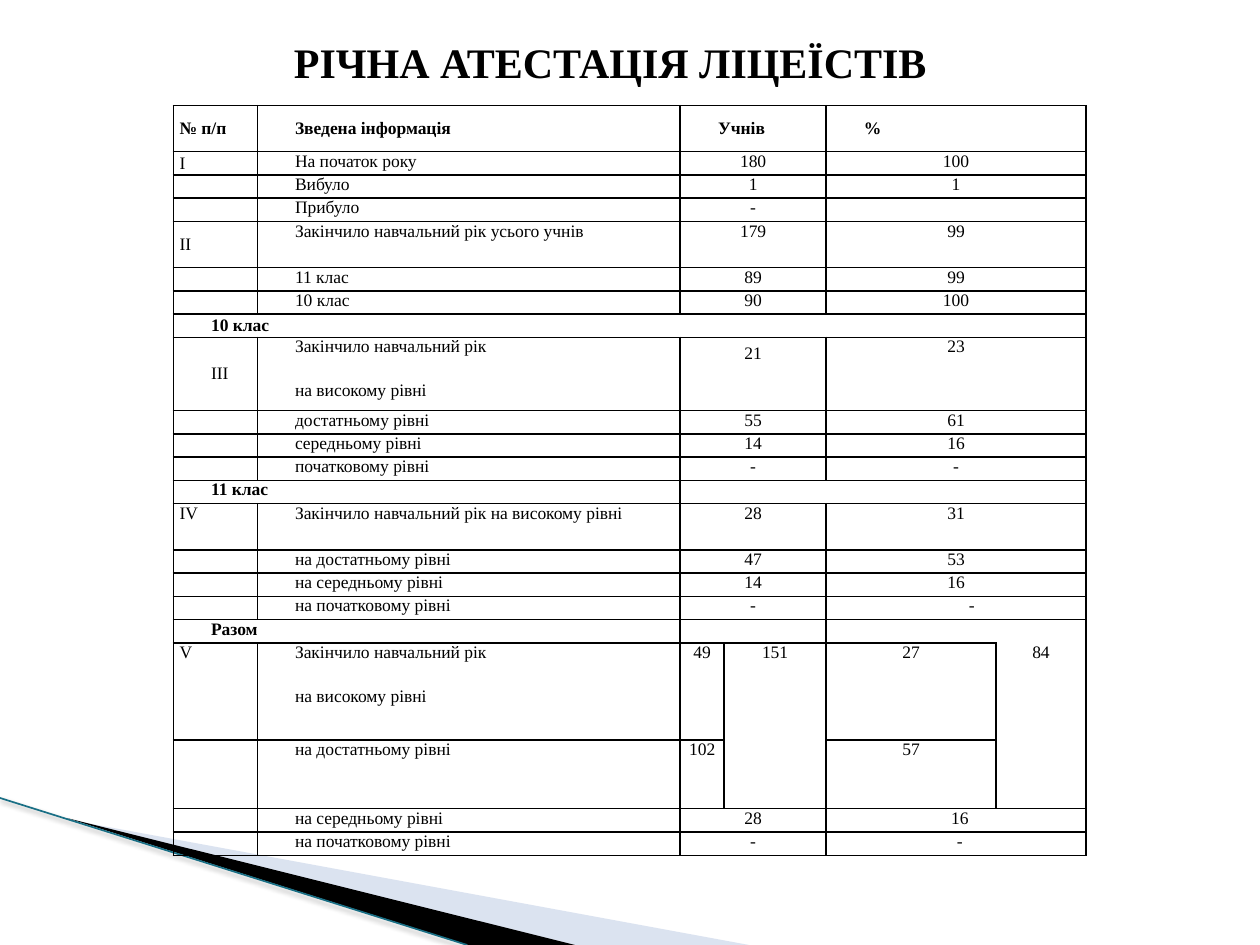
from lxml import etree
from pptx import Presentation
from pptx.dml.color import RGBColor
from pptx.enum.shapes import MSO_CONNECTOR
from pptx.enum.text import MSO_ANCHOR, PP_ALIGN
from pptx.oxml.ns import qn
from pptx.util import Pt

STRAIGHT = MSO_CONNECTOR.STRAIGHT
MIDDLE, TOP = MSO_ANCHOR.MIDDLE, MSO_ANCHOR.TOP
CENTER, JUSTIFY = PP_ALIGN.CENTER, PP_ALIGN.JUSTIFY

COLORS = {"ink": "000000", "wedge": "A7B9DB", "edge": "196F85"}
FONT = "Times New Roman"
NO_STYLE = "{2D5ABB26-0587-4C30-8999-92F81FD0307C}"
COLUMNS = [48, 241.7, 25.1, 58.3, 97.1, 51.4]
LOW, TALL = 13.3, 26.4
LEFT, UP = "<", "^"


def record(number, label, pupils, percent, height=LOW):
    return height, [number, label, pupils, LEFT, percent, LEFT]


ROWS = [
    record("№ п/п", "Зведена інформація", "Учнів", "%", TALL),
    record("І", "На початок року", "180", "100"),
    record("", "Вибуло", "1", "1"),
    record("", "Прибуло", "-", ""),
    record("ІІ", "Закінчило навчальний рік усього учнів", "179", "99", TALL),
    record("", "11 клас", "89", "99"),
    record("", "10 клас", "90", "100"),
    (LOW, ["10 клас"] + [LEFT] * 5),
    record("ІІІ", "Закінчило навчальний рік\nна високому рівні", "21", "23", 41.8),
    record("", "достатньому рівні", "55", "61"),
    record("", "середньому рівні", "14", "16"),
    record("", "початковому рівні", "-", "-"),
    (LOW, ["11 клас", LEFT, "", LEFT, LEFT, LEFT]),
    record("ІV", "Закінчило навчальний рік на високому рівні", "28", "31", TALL),
    record("", "на достатньому рівні", "47", "53"),
    record("", "на середньому рівні", "14", "16"),
    record("", "на початковому рівні", "-", "-"),
    (LOW, ["Разом", LEFT, "", LEFT, "", LEFT]),
    (55.4, ["V", "Закінчило навчальний рік\nна високому рівні", "49", "151", "27", "84"]),
    (39.4, ["", "на достатньому рівні", "102", UP, "57", UP]),
    record("", "на середньому рівні", "28", "16"),
    record("", "на початковому рівні", "-", "-"),
]
BOLD_ROWS = {0, 7, 12, 17}
MIDDLE_CELLS = {(1, 0), (4, 0), (7, 0), (8, 0)}
INDENTS = {(0, 0): 0, (8, 0): 18, (16, 4): 18, (21, 4): 4.3}
LEFT_MARGINS = {(20, 4): 4.3}
LINE_SPACINGS = {(8, 2): 15}
OPEN_EDGES = {(17, 4): "lnB", (17, 5): "lnB", (18, 5): "lnT"}


def set_format(target, values):
    for name, value in values.items():
        setattr(target, name, value)


def style_font(font, size, bold):
    set_format(font, {"name": FONT, "size": Pt(size), "bold": bold, "italic": False})
    font.color.rgb = RGBColor.from_string(COLORS["ink"])


def add_color(parent, color, alpha=None):
    rgb = etree.SubElement(parent, qn("a:srgbClr"), val=color)
    if alpha:
        etree.SubElement(rgb, qn("a:alpha"), val=str(alpha * 1000))


def add_title(slide, left, top, width, height):
    title = slide.shapes.title
    set_format(title, {"left": Pt(left), "top": Pt(top), "width": Pt(width), "height": Pt(height)})
    frame = title.text_frame
    set_format(frame, {"margin_left": Pt(49.5), "margin_right": 0, "margin_top": 0,
                       "margin_bottom": 0, "vertical_anchor": MIDDLE, "word_wrap": True})
    heading = frame.paragraphs[0]
    heading.alignment = CENTER
    run = heading.add_run()
    run.text = "РІЧНА АТЕСТАЦІЯ ЛІЦЕЇСТІВ"
    style_font(run.font, 24, True)


def add_wedge(slide, points, color, alpha=None):
    corners = [(Pt(x), Pt(y)) for x, y in points]
    builder = slide.shapes.build_freeform(*corners[0], scale=1.0)
    builder.add_line_segments(corners[1:], close=True)
    wedge = builder.convert_to_shape()
    wedge.shadow.inherit = False
    wedge.line.fill.background()
    wedge.fill.solid()
    wedge.fill.fore_color.rgb = RGBColor.from_string(color)
    if alpha:
        rgb = wedge.element.spPr.find(".//" + qn("a:srgbClr"))
        etree.SubElement(rgb, qn("a:alpha"), val=str(alpha * 1000))


def add_corner(slide, left, top, width, height):
    bottom = top + height
    add_wedge(slide, [(left + 39.6, top + 12.5), (left + width, bottom),
                      (left + 328.5, bottom)], COLORS["wedge"], 40)
    add_wedge(slide, [(left + 38.2, top + 11.5), (left + 328.5, bottom),
                      (left + 267.5, bottom)], COLORS["ink"])
    edge = slide.shapes.add_connector(STRAIGHT, Pt(left), Pt(top), Pt(left + 267), Pt(bottom))
    edge.line.width = Pt(0.96)
    edge.line.color.rgb = RGBColor.from_string(COLORS["edge"])
    effects = etree.SubElement(edge.element.spPr, qn("a:effectLst"))
    shadow = etree.SubElement(effects, qn("a:outerShdw"), blurRad=str(Pt(3.1)),
                              dist=str(Pt(1.6)), dir="5400000")
    add_color(shadow, COLORS["ink"], 38)


def add_borders(cell, open_edge):
    properties = cell._tc.get_or_add_tcPr()
    for position, side in enumerate(("lnL", "lnR", "lnT", "lnB")):
        border = etree.Element(qn("a:" + side), w=str(Pt(1)))
        if side == open_edge:
            etree.SubElement(border, qn("a:noFill"))
        else:
            add_color(etree.SubElement(border, qn("a:solidFill")), COLORS["ink"])
        properties.insert(position, border)


def fill_cell(cell, text, place):
    row, column = place
    bold = row in BOLD_ROWS
    centered = column > 1 and row > 0
    indent = INDENTS.get(place, 18 if column == 1 or bold else 0)
    set_format(cell, {"margin_left": Pt(3.6), "margin_right": Pt(3.6),
                      "margin_top": 0, "margin_bottom": 0,
                      "vertical_anchor": MIDDLE if row == 0 or place in MIDDLE_CELLS else TOP})
    cell.fill.background()
    add_borders(cell, OPEN_EDGES.get(place))
    if text in ("", LEFT, UP):
        etree.SubElement(cell.text_frame.paragraphs[0]._p, qn("a:endParaRPr"), sz="1000")
        return
    for number, line in enumerate(text.split("\n")):
        paragraph = cell.text_frame.add_paragraph() if number else cell.text_frame.paragraphs[0]
        paragraph.alignment = CENTER if centered else JUSTIFY
        if number:
            paragraph.space_before = Pt(14)
        if place in LINE_SPACINGS:
            paragraph.line_spacing = Pt(LINE_SPACINGS[place])
        properties = paragraph._p.get_or_add_pPr()
        properties.set("marL", str(Pt(LEFT_MARGINS.get(place, 0))))
        if indent and not centered or place in INDENTS:
            properties.set("indent", str(Pt(indent)))
        run = paragraph.add_run()
        run.text = line
        style_font(run.font, 10, bold)


def merge_cells(table):
    for row, (_, texts) in enumerate(ROWS):
        for column, text in enumerate(texts):
            if text in (LEFT, UP):
                continue
            last_column, last_row = column, row
            while last_column + 1 < len(texts) and texts[last_column + 1] == LEFT:
                last_column += 1
            while last_row + 1 < len(ROWS) and ROWS[last_row + 1][1][column] == UP:
                last_row += 1
            if (last_row, last_column) != (row, column):
                table.cell(row, column).merge(table.cell(last_row, last_column))


def add_results(slide, left, top, width, height):
    table = slide.shapes.add_table(len(ROWS), len(COLUMNS), Pt(left), Pt(top),
                                   Pt(width), Pt(height)).table
    set_format(table, {"first_row": False, "horz_banding": False})
    table._tbl.tblPr.find(qn("a:tableStyleId")).text = NO_STYLE
    for column, column_width in zip(table.columns, COLUMNS):
        column.width = Pt(column_width)
    for row, (row_height, texts) in enumerate(ROWS):
        table.rows[row].height = Pt(row_height)
        for column, text in enumerate(texts):
            fill_cell(table.cell(row, column), text, (row, column))
    merge_cells(table)


def main():
    deck = Presentation()
    set_format(deck, {"slide_width": Pt(720), "slide_height": Pt(540)})
    slide = deck.slides.add_slide(deck.slide_layouts[5])
    add_corner(slide, 0, 456, 428, 84)
    add_results(slide, 99, 60.3, sum(COLUMNS), sum(height for height, _ in ROWS))
    add_title(slide, 0, 21.6, 648, 27.4)
    deck.save("out.pptx")


if __name__ == "__main__":
    main()
